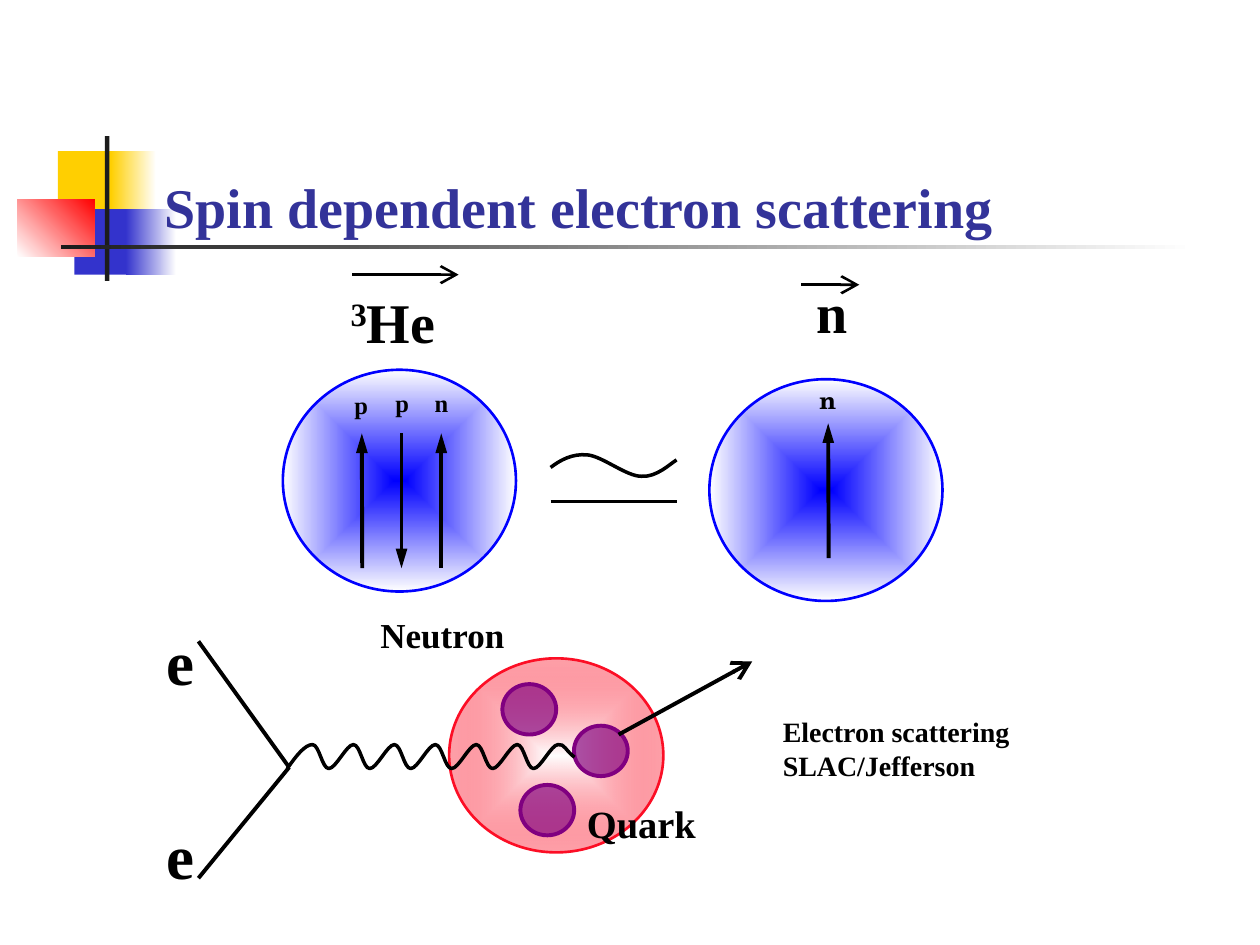
import lxml.etree
import pptx
import pptx.dml.color
import pptx.enum.shapes
import pptx.enum.text
import pptx.oxml.ns
import pptx.util

RGB = pptx.dml.color.RGBColor
BLACK, WHITE = RGB(0, 0, 0), RGB(255, 255, 255)
YELLOW, INDIGO, RED = RGB(0xFF, 0xCF, 0x01), RGB(0x33, 0x33, 0xCC), RGB(255, 0, 0)
CHARCOAL, NAVY, BLUE = RGB(0x1C, 0x1C, 0x1C), RGB(0x33, 0x33, 0x99), RGB(0, 0, 255)
CRIMSON, PURPLE = RGB(0xFC, 0x0E, 0x25), RGB(0x80, 0, 0x80)
SERIF, SCHOLA = "Times New Roman", "TeX Gyre Schola"
RECT = pptx.enum.shapes.MSO_SHAPE.RECTANGLE
OVAL = pptx.enum.shapes.MSO_SHAPE.OVAL
STRAIGHT = pptx.enum.shapes.MSO_CONNECTOR.STRAIGHT
qn = pptx.oxml.ns.qn

prs = pptx.Presentation()
prs.slide_width, prs.slide_height = pptx.util.Inches(10), pptx.util.Inches(7.5)
CELL = prs.slide_width / 100
s = prs.slides.add_slide(prs.slide_layouts[5])


def grid(*cells):
    return [pptx.util.Emu(round(c * CELL)) for c in cells]


def paint(sp, start, end, angle=None, alpha=100):
    sp.fill.gradient()
    for stop, color in zip(sp.fill.gradient_stops, (start, end)):
        stop.color.rgb = color
    grad = sp._element.spPr.find(qn("a:gradFill"))
    if alpha < 100:
        last = grad.findall(".//" + qn("a:srgbClr"))[-1]
        lxml.etree.SubElement(last, qn("a:alpha"), val=str(alpha * 1000))
    if angle is not None:
        sp.fill.gradient_angle = angle
        return
    grad.remove(grad.find(qn("a:lin")))
    shade = lxml.etree.SubElement(grad, qn("a:path"))
    shade.set("path", "shape")
    lxml.etree.SubElement(shade, qn("a:fillToRect"), l="50000", t="50000", r="50000", b="50000")


decorations = [
    ((4.6, 12, 4.8, 5.2), YELLOW, None, 0),
    ((8.8, 12, 3.6, 5.2), YELLOW, WHITE, 0),
    ((5.9, 16.6, 4.6, 5.2), INDIGO, None, 0),
    ((10, 16.6, 4, 5.2), INDIGO, WHITE, 0),
    ((1.4, 15.8, 6.1, 4.6), WHITE, RED, 45),
    ((8.33, 10.8, 0.35, 11.5), CHARCOAL, None, 0),
    ((4.85, 19.45, 90, 0.35), CHARCOAL, WHITE, 0),
]
for box, start, end, angle in decorations:
    sp = s.shapes.add_shape(RECT, *grid(*box))
    sp.shadow.inherit = False
    sp.line.fill.background()
    if end is None:
        sp.fill.solid()
        sp.fill.fore_color.rgb = start
    else:
        paint(sp, start, end, angle)

nuclei = [
    ((22.45, 29.35, 18.5, 17.6), BLUE, WHITE, BLUE, 100),
    ((56.3, 30.1, 18.5, 17.6), BLUE, WHITE, BLUE, 100),
    ((35.65, 52.25, 17, 15.4), WHITE, CRIMSON, CRIMSON, 39),
]
for box, start, end, outline, alpha in nuclei:
    sp = s.shapes.add_shape(OVAL, *grid(*box))
    sp.shadow.inherit = False
    paint(sp, start, end, alpha=alpha)
    sp.line.color.rgb = outline
    sp.line.width = pptx.util.Pt(1.5)

for x, y in [(45.55, 57.6), (39.87, 54.3), (41.3, 62.3)]:
    sp = s.shapes.add_shape(OVAL, *grid(x, y, 4.27, 4))
    sp.shadow.inherit = False
    sp.fill.solid()
    sp.fill.fore_color.rgb = PURPLE
    color = sp._element.spPr.find(qn("a:solidFill"))[0]
    lxml.etree.SubElement(color, qn("a:alpha"), val="65000")
    sp.line.color.rgb = PURPLE
    sp.line.width = pptx.util.Pt(2.25)

tilde = [
    (43.7, 37.1),
    (44.5, 36.5), (45.4, 36), (46.6, 36.1),
    (47.8, 36.2), (49.7, 37.8), (50.9, 37.8),
    (52.1, 37.9), (53.2, 36.8), (53.7, 36.5),
]
LOW, HIGH, PERIOD = 61, 59.1, 3.25
photon = [(22.8, LOW), (23.5, 60), (24.2, HIGH), (24.8, HIGH)]
for i in range(6):
    x = 24.8 + i * PERIOD
    photon += [(x + 0.55, HIGH), (x + 0.75, LOW), (x + 1.3, LOW)]
    photon += [(x + 1.85, LOW), (x + 2.7, HIGH), (x + PERIOD, HIGH)]
photon += [(44.8, 59), (44.9, 59.6), (45.6, 60.1)]

for curve in (tilde, photon):
    builder = s.shapes.build_freeform(*grid(*curve[0]))
    builder.add_line_segments([grid(*point) for point in curve[1:]], close=False)
    sp = builder.convert_to_shape()
    steps = list(sp._element.iter(qn("a:lnTo")))
    outline = steps[0].getparent()
    for i in range(0, len(steps), 3):
        bezier = lxml.etree.SubElement(outline, qn("a:cubicBezTo"))
        for step in steps[i:i + 3]:
            bezier.append(step[0])
            outline.remove(step)
    sp.shadow.inherit = False
    sp.fill.background()
    sp.line.color.rgb = BLACK
    sp.line.width = pptx.util.Pt(2)

lines = [
    ((28.75, 45.1, 28.72, 34.4), 2.25, "triangle", "med"),
    ((31.87, 34.4, 31.87, 45.1), 2.25, "triangle", "med"),
    ((35.02, 45.1, 35.02, 34.4), 2.25, "triangle", "med"),
    ((65.77, 44.3, 65.73, 33.6), 2.25, "triangle", "med"),
    ((27.95, 21.8, 36.4, 21.8), 1.5, "arrow", "lg"),
    ((63.6, 22.6, 68.2, 22.6), 1.5, "arrow", "lg"),
    ((49.1, 58.3, 59.7, 52.5), 2.25, "arrow", "lg"),
    ((43.7, 39.8, 53.7, 39.8), 2, None, None),
    ((15.75, 50.9, 22.95, 60.9), 2.25, None, None),
    ((22.95, 60.9, 15.75, 69.7), 2.25, None, None),
]
for ends, width, arrow, spread in lines:
    sp = s.shapes.add_connector(STRAIGHT, *grid(*ends))
    sp.line.color.rgb = BLACK
    sp.line.width = pptx.util.Pt(width)
    if arrow:
        ln = sp._element.spPr.find(qn("a:ln"))
        lxml.etree.SubElement(ln, qn("a:tailEnd"), type=arrow, w=spread, len="lg")
    lxml.etree.SubElement(sp._element.spPr, qn("a:effectLst"))

labels = [
    ("p", (27.15, 30.5, 2.5, 3.3), 14, SERIF, True),
    ("p", (30.4, 30.3, 3.6, 3.4), 14, SERIF, False),
    ("n", (33.5, 30.3, 3.1, 3.4), 14, SERIF, False),
    ("n", (64.05, 30.1, 3.9, 3.3), 14, SCHOLA, True),
    ("3He", (26.85, 22.3, 12.6, 6.5), 32, SERIF, True),
    ("n", (63.85, 21.55, 6.4, 6.5), 32, SERIF, True),
    ("e", (12.2, 48.9, 5, 7), 36, SERIF, True),
    ("e", (12.2, 64.3, 5, 7), 36, SERIF, True),
    ("Quark", (45.6, 63, 12.8, 4.7), 22, SERIF, True),
    ("Neutron", (29.2, 48.2, 14.9, 4.3), 20, SERIF, True),
    ("Electron scattering SLAC/Jefferson", (61.15, 56.25, 22.7, 6.4), 16, SERIF, True),
]
for text, box, size, face, spaced in labels:
    tf = s.shapes.add_textbox(*grid(*box)).text_frame
    tf.word_wrap = spaced
    p = tf.paragraphs[0]
    for part in ("3", "He") if text == "3He" else (text,):
        r = p.add_run()
        r.text = part
        if part == "3":
            r.font._element.set("baseline", "30000")
    p.font.size = pptx.util.Pt(size)
    p.font.name = face
    p.font.bold = True
    p.font.color.rgb = BLACK
    if spaced:
        before = lxml.etree.Element(qn("a:spcBef"))
        lxml.etree.SubElement(before, qn("a:spcPct"), val="50000")
        p._p.pPr.insert(0, before)

title = s.shapes.title
title.left, title.top, title.width, title.height = grid(12.05, 11.1, 85.2, 8.4)
tf = title.text_frame
tf.text = "Spin dependent electron scattering"
tf.vertical_anchor = pptx.enum.text.MSO_ANCHOR.BOTTOM
p = tf.paragraphs[0]
p.alignment = pptx.enum.text.PP_ALIGN.LEFT
p.font.size = pptx.util.Pt(32)
p.font.name = SERIF
p.font.bold = True
p.font.color.rgb = NAVY
s.shapes._spTree.append(title._element)

prs.save("out.pptx")
